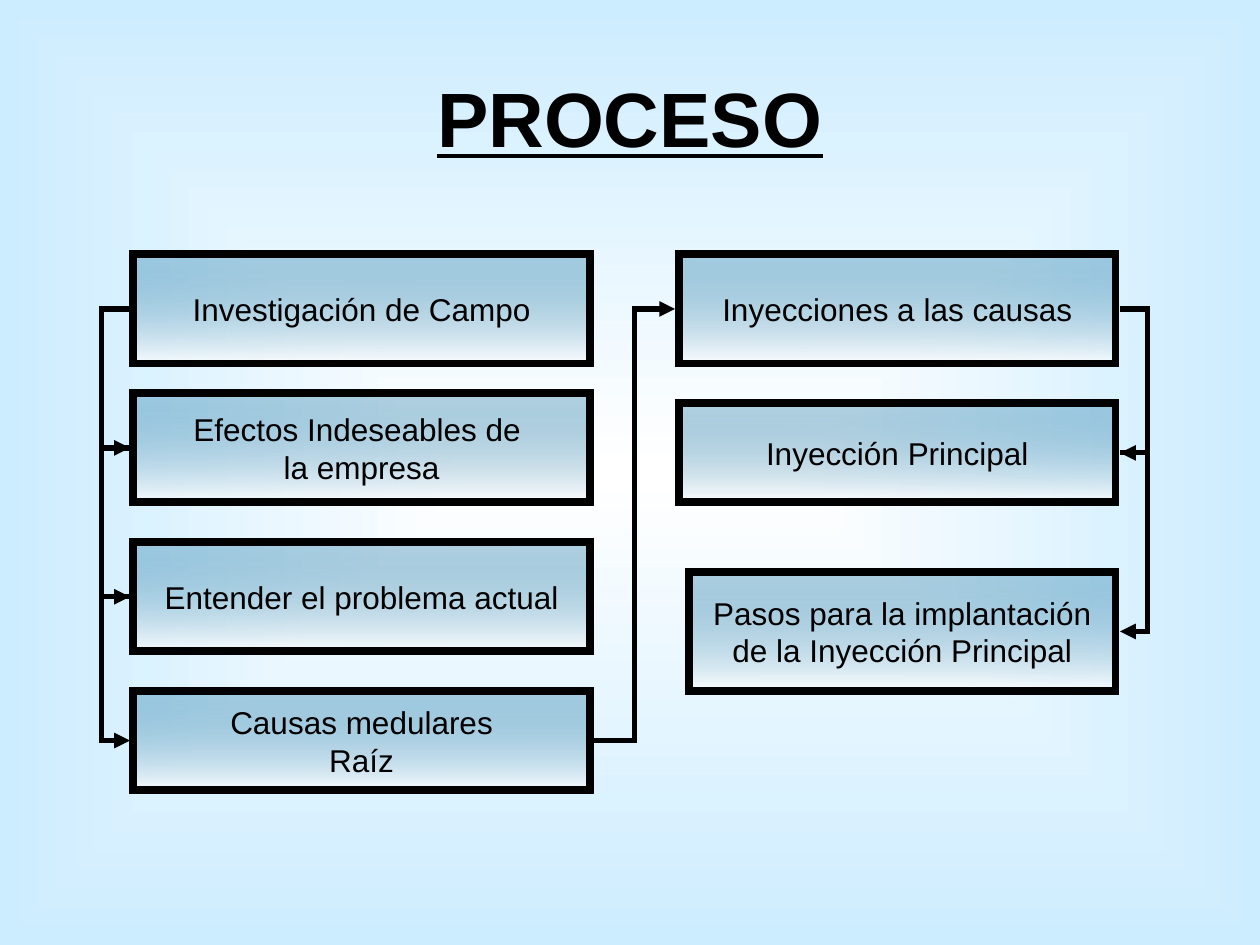
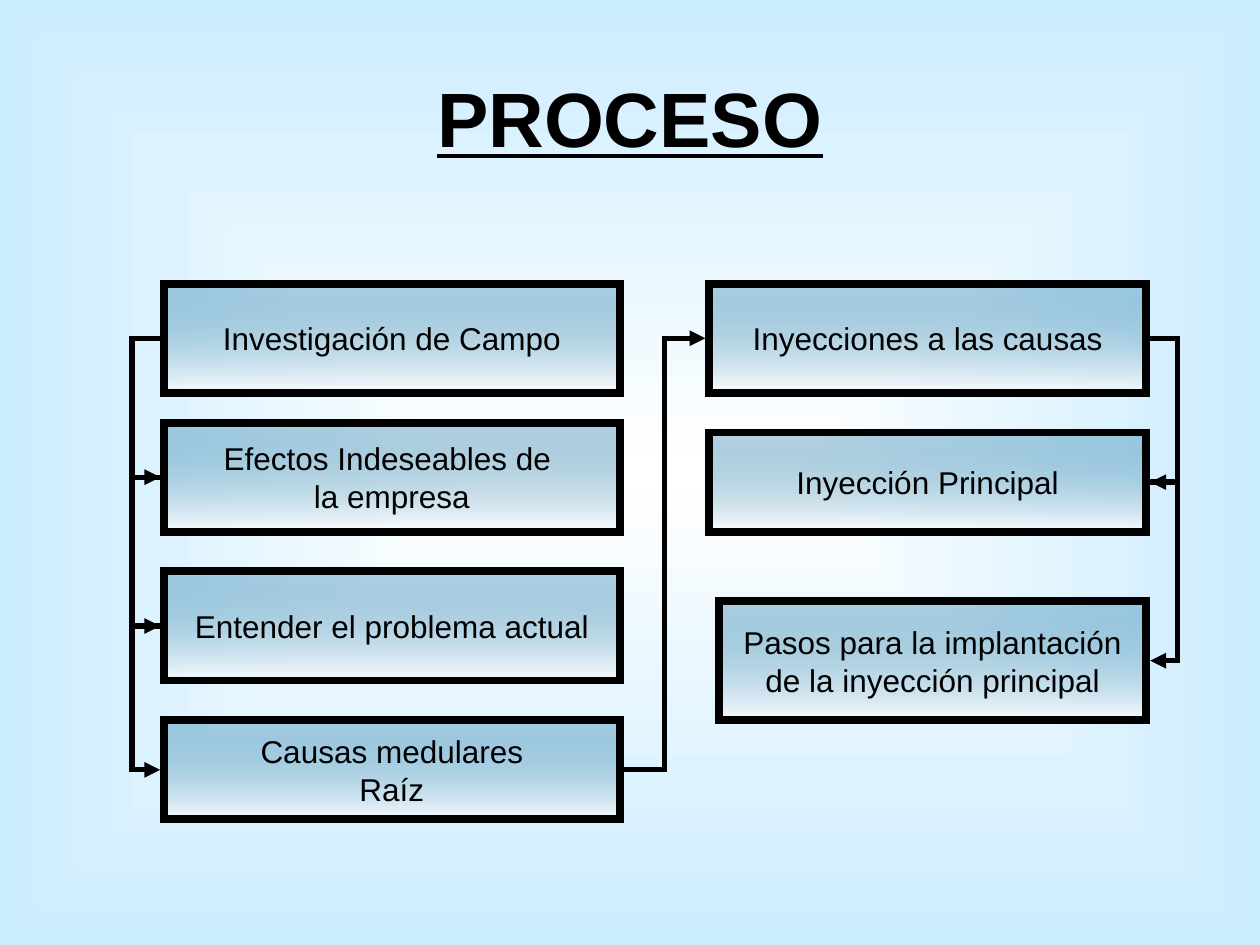
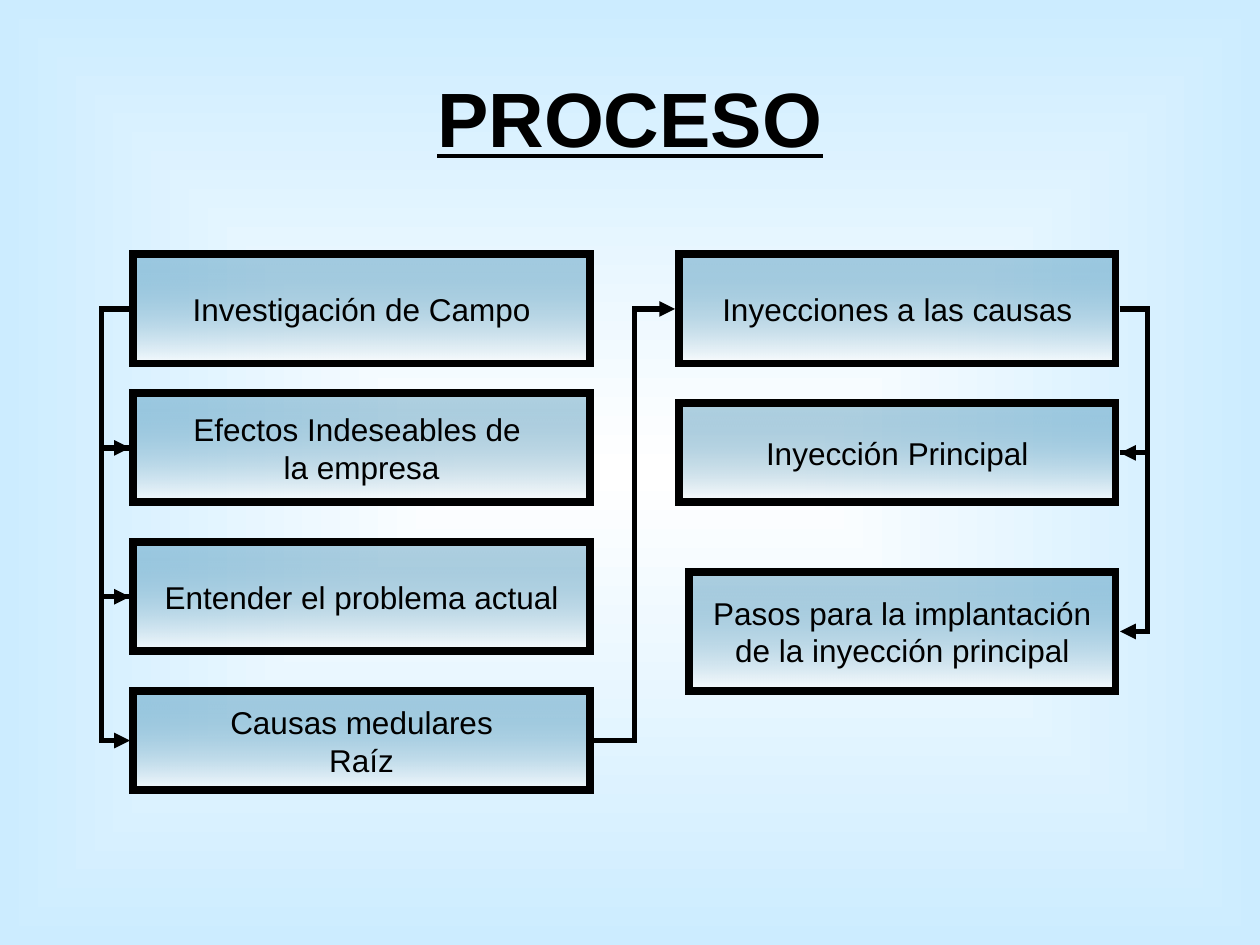
from lxml import etree
from pptx import Presentation
from pptx import util as u
from pptx.dml.color import RGBColor
from pptx.enum import shapes, text
from pptx.oxml.ns import qn

BLACK = RGBColor(0x00, 0x00, 0x00)
WHITE = RGBColor(0xFF, 0xFF, 0xFF)
SKY = RGBColor(0xCC, 0xEC, 0xFF)
TEAL = RGBColor(0x00, 0x66, 0x99)
FONT = "Arial"
TITLE = "PROCESO"

LEFT_SITE, RIGHT_SITE = 1, 3
BORDER_GAP = 0.08
ELBOW_REACH = 0.56
ELBOW_WIDTH = 0.01

STEPS = [
    (0, 0, 9.2, 2.2, ["Investigación de Campo"]),
    (0, 2.8, 9.2, 2.2, ["Efectos Indeseables de ", "la empresa"]),
    (0, 5.8, 9.2, 2.2, ["Entender el problema actual"]),
    (0, 8.8, 9.2, 2, ["Causas medulares", "Raíz"]),
    (11, 0, 8.8, 2.2, ["Inyecciones a las causas"]),
    (11, 3, 8.8, 2, ["Inyección Principal"]),
]
LAST_STEP = (11.2, 6.4, 8.6, 2.4)
SLIDES = [
    (2.69, 5.13, "de la Inyección Principal"),
    (3.3, 5.72, "de la inyección principal"),
    (2.69, 5.13, "de la inyección principal"),
]


def add_child(parent, tag, **attributes):
    return etree.SubElement(parent, qn(tag), {key: str(value) for key, value in attributes.items()})


def set_gradient(fill, start, end):
    fill.gradient()
    for stop, color, position in zip(fill.gradient_stops, (start, end), (0, 1)):
        stop.color.rgb = color
        stop.position = position


def set_line(shape, points):
    shape.line.color.rgb = BLACK
    shape.line.width = u.Pt(points)
    line = shape._element.spPr.find(qn("a:ln"))
    add_child(line, "a:miter", lim=800000)
    return line


def set_background(master):
    set_gradient(master.background.fill, WHITE, SKY)
    gradient = next(master._element.iter(qn("a:gradFill")))
    gradient.remove(gradient.find(qn("a:lin")))
    shade = add_child(gradient, "a:path", path="shape")
    add_child(shade, "a:fillToRect", l=50000, t=50000, r=50000, b=50000)


def add_title(page):
    title = page.shapes.title
    title.left, title.top = u.Cm(1.27), u.Cm(0.76)
    title.width, title.height = u.Cm(22.86), u.Cm(3.18)
    title.text_frame.text = TITLE
    title.text_frame.vertical_anchor = text.MSO_ANCHOR.MIDDLE
    para = title.text_frame.paragraphs[0]
    para.alignment = text.PP_ALIGN.CENTER
    para.font.name, para.font.size = FONT, u.Pt(44)
    para.font.bold = para.font.underline = True
    para.font.color.rgb = BLACK


def add_step(page, left, top, width, height, lines):
    box = page.shapes.add_shape(
        shapes.MSO_SHAPE.RECTANGLE, u.Cm(left), u.Cm(top), u.Cm(width), u.Cm(height))
    box.shadow.inherit = False
    set_gradient(box.fill, TEAL, WHITE)
    box.fill.gradient_angle = 270
    for color, alpha in zip(box._element.spPr.iter(qn("a:srgbClr")), (29000, 79000)):
        add_child(color, "a:alpha", val=alpha)
    set_line(box, 4.5)
    frame = box.text_frame
    frame.word_wrap = False
    frame.vertical_anchor = text.MSO_ANCHOR.MIDDLE
    frame.text = "\n".join(lines)
    for para in frame.paragraphs:
        para.alignment = text.PP_ALIGN.CENTER
        para.font.name, para.font.size = FONT, u.Pt(18)
        para.font.color.rgb = BLACK
    return box


def side_point(box, site):
    if site == LEFT_SITE:
        x = box.left - u.Cm(BORDER_GAP)
    else:
        x = box.left + box.width + u.Cm(BORDER_GAP)
    return x, box.top + box.height // 2


def add_arrow(page, start, start_site, end, end_site):
    start_x, start_y = side_point(start, start_site)
    end_x, end_y = side_point(end, end_site)
    bend = 0.5
    if start_site == end_site:
        end_x = start_x + u.Cm(ELBOW_WIDTH)
        bend = ELBOW_REACH / ELBOW_WIDTH * (-1 if start_site == LEFT_SITE else 1)
    arrow = page.shapes.add_connector(
        shapes.MSO_CONNECTOR.ELBOW, start_x, start_y, end_x, end_y)
    add_child(set_line(arrow, 3), "a:tailEnd", type="triangle")
    element = arrow._element
    add_child(element.spPr, "a:effectLst")
    add_child(next(element.iter(qn("a:avLst"))), "a:gd",
              name="adj1", fmla=f"val {round(bend * 100000)}")
    links = next(element.iter(qn("p:cNvCxnSpPr")))
    add_child(links, "a:stCxn", id=start.shape_id, idx=start_site)
    add_child(links, "a:endCxn", id=end.shape_id, idx=end_site)


def add_process(page, left, top, last_line):
    steps = STEPS + [(*LAST_STEP, ["Pasos para la implantación", last_line])]
    boxes = [add_step(page, left + x, top + y, width, height, lines)
             for x, y, width, height, lines in steps]
    first_column, second_column = boxes[:4], boxes[4:]
    for start, end in zip(first_column, first_column[1:]):
        add_arrow(page, start, LEFT_SITE, end, LEFT_SITE)
    add_arrow(page, first_column[-1], RIGHT_SITE, second_column[0], LEFT_SITE)
    for start, end in zip(second_column, second_column[1:]):
        add_arrow(page, start, RIGHT_SITE, end, RIGHT_SITE)


def main():
    deck = Presentation()
    deck.slide_width, deck.slide_height = u.Cm(25.4), u.Cm(19.05)
    set_background(deck.slide_master)
    for left, top, last_line in SLIDES:
        page = deck.slides.add_slide(deck.slide_layouts.get_by_name("Title Only"))
        add_title(page)
        add_process(page, left, top, last_line)
    deck.save("out.pptx")


if __name__ == "__main__":
    main()
